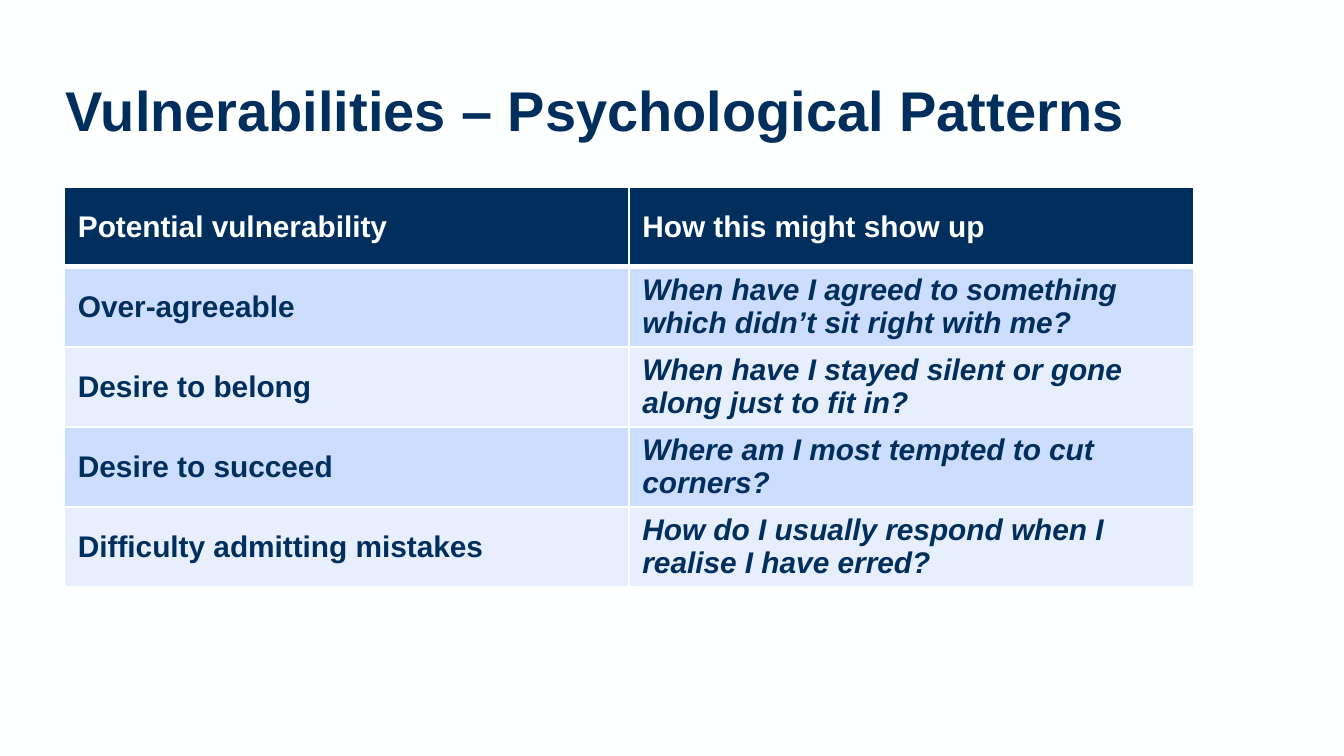
"""Build a slide with a table of psychological vulnerabilities."""
from dataclasses import dataclass

from lxml.etree import SubElement
from pptx import Presentation
from pptx.dml.color import RGBColor as Rgb
from pptx.enum.text import MSO_ANCHOR as Anchor
from pptx.oxml.ns import qn
from pptx.slide import Slide
from pptx.table import _Cell as Cell
from pptx.text.text import _Paragraph as Paragraph
from pptx.util import Inches, Pt

COLOURS = {
    "paper": "FEFFFF",
    "navy": "002F5E",
    "dark_band": "CCDDFF",
    "light_band": "E7EFFF",
}


@dataclass(frozen=True)
class Pattern:
    vulnerability: str
    sign: str


HEADING = Pattern("Potential vulnerability", "How this might show up")
PATTERNS = [
    Pattern("Over-agreeable", "When have I agreed to something which didn’t sit right with me?"),
    Pattern("Desire to belong", "When have I stayed silent or gone along just to fit in?"),
    Pattern("Desire to succeed", "Where am I most tempted to cut corners?"),
    Pattern("Difficulty admitting mistakes", "How do I usually respond when I realise I have erred?"),
]


def colour(name: str) -> Rgb:
    return Rgb.from_string(COLOURS[name])


def write(para: Paragraph, text: str, size: int, ink: str, italic: bool = False) -> None:
    span = para.add_run()
    span.text = text
    style = {"name": "Arial", "size": Pt(size), "bold": True, "italic": italic}
    for key, value in style.items():
        setattr(span.font, key, value)
    span.font.color.rgb = colour(ink)


def add_borders(cell: Cell, bottom: int) -> None:
    properties = cell._tc.get_or_add_tcPr()
    widths = {"a:lnL": 1, "a:lnR": 1, "a:lnT": 1, "a:lnB": bottom}
    for position, (tag, width) in enumerate(widths.items()):
        line = SubElement(properties, qn(tag), w=str(Pt(width)))
        fill = SubElement(line, qn("a:solidFill"))
        SubElement(fill, qn("a:srgbClr"), val=COLOURS["paper"])
        properties.insert(position, line)


def fill_cell(cell: Cell, text: str, band: str, ink: str, italic: bool, bottom: int) -> None:
    layout = {
        "vertical_anchor": Anchor.MIDDLE,
        "margin_left": Inches(0.1),
        "margin_right": Inches(0.1),
        "margin_top": Inches(0.05),
        "margin_bottom": Inches(0.05),
    }
    for key, value in layout.items():
        setattr(cell, key, value)
    cell.fill.solid()
    cell.fill.fore_color.rgb = colour(band)
    add_borders(cell, bottom)
    para = cell.text_frame.paragraphs[0]
    para.line_spacing = Pt(17.7)
    write(para, text, 16, ink, italic)


def add_title(page: Slide, text: str) -> None:
    box = page.shapes.add_textbox(Inches(0.39), Inches(0.3), Inches(9.31), Inches(1.09))
    frame = box.text_frame
    frame.word_wrap = True
    frame.vertical_anchor = Anchor.MIDDLE
    para = frame.paragraphs[0]
    para.line_spacing = Pt(31)
    write(para, text, 30, "navy")


def add_patterns(page: Slide) -> None:
    rows = [HEADING, *PATTERNS]
    table = page.shapes.add_table(
        len(rows), 2, Inches(0.48), Inches(1.39), Inches(8.4), Inches(2.98)
    ).table
    for index, pattern in enumerate(rows):
        heading = index == 0
        band = "navy" if heading else "dark_band" if index % 2 else "light_band"
        ink = "paper" if heading else "navy"
        bottom = 3 if heading else 1
        for column, text in enumerate((pattern.vulnerability, pattern.sign)):
            italic = column == 1 and not heading
            fill_cell(table.cell(index, column), text, band, ink, italic, bottom)


def main() -> None:
    deck = Presentation()
    deck.slide_width = Inches(10)
    deck.slide_height = deck.slide_width * 9 // 16
    page = deck.slides.add_slide(deck.slide_layouts[6])
    page.background.fill.solid()
    page.background.fill.fore_color.rgb = colour("paper")
    add_title(page, "Vulnerabilities – Psychological Patterns")
    add_patterns(page)
    deck.save("out.pptx")


if __name__ == "__main__":
    main()
